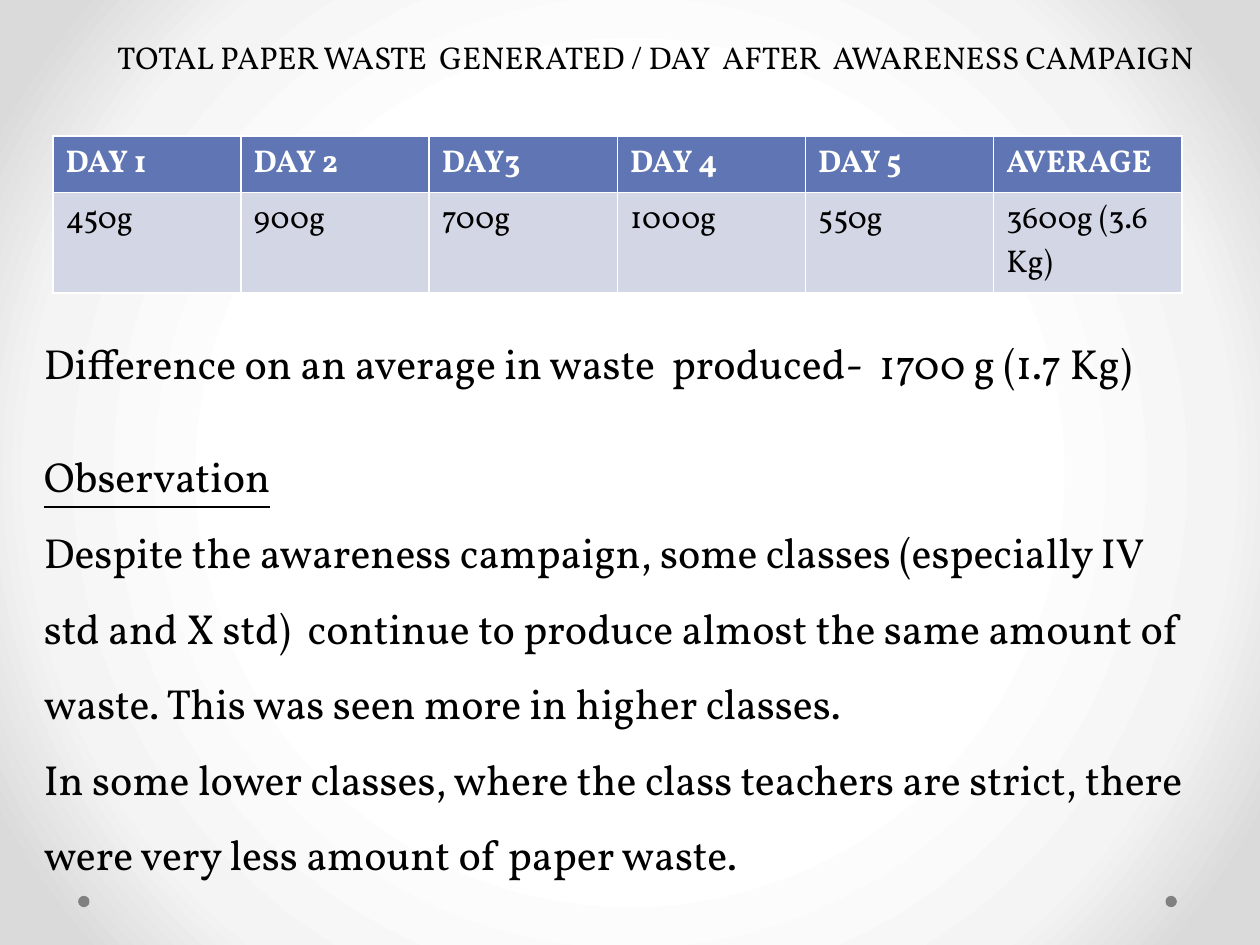
from dataclasses import dataclass

from lxml import etree
from pptx import Presentation
from pptx.dml.color import RGBColor
from pptx.enum import shapes, text
from pptx.oxml import ns
from pptx.util import Inches, Pt

FONT = "Vollkorn"
BLACK = RGBColor(0x00, 0x00, 0x00)
WHITE = RGBColor(0xFF, 0xFF, 0xFF)
GREY = RGBColor(0x80, 0x80, 0x80)
BLUE = RGBColor(0x60, 0x76, 0xB4)
PALE_BLUE = RGBColor(0xD2, 0xD6, 0xE5)
GLOW_STOPS = [(50, WHITE), (76, RGBColor(0xF4, 0xF4, 0xF4)), (92, RGBColor(0xDA, 0xDA, 0xDA))]


@dataclass
class Line:
    words: str
    underline: bool = False


@dataclass
class TextBlock:
    top: float
    height: float
    lines: list[Line]
    spacing: float = 1.0


@dataclass
class TableRow:
    values: list[str]
    fill: RGBColor
    color: RGBColor
    bold: bool


TABLE_ROWS = [
    TableRow(["DAY 1", "DAY 2", "DAY3", "DAY 4", "DAY 5", "AVERAGE"], BLUE, WHITE, True),
    TableRow(["450g", "900g", "700g", "1000g", "550g", "3600g (3.6 Kg)"], PALE_BLUE, BLACK, False),
]
TEXT_BLOCKS = [
    TextBlock(2.63, 0.5, [Line("Difference on an average in waste  produced-  1700 g (1.7 Kg)")]),
    TextBlock(3.33, 3.74, [
        Line("Observation", underline=True),
        Line("Despite the awareness campaign, some classes (especially IV std and X std)  continue "
             "to produce almost the same amount of waste. This was seen more in higher classes."),
        Line("In some lower classes, where the class teachers are strict, there were very less "
             "amount of paper waste."),
    ], spacing=1.5),
]


def write(para, words: str, *, size: float, color: RGBColor = BLACK, bold: bool = False,
          underline: bool = False, spacing: float = 1.0) -> None:
    para.alignment = text.PP_ALIGN.LEFT
    para.line_spacing = spacing
    span = para.add_run()
    span.text = words
    font = span.font
    font.name, font.size, font.bold, font.underline = FONT, Pt(size), bold, underline
    font.color.rgb = color


def place(shape, left: float, top: float, width: float, height: float) -> None:
    shape.left, shape.top = Inches(left), Inches(top)
    shape.width, shape.height = Inches(width), Inches(height)


def paint_background(page) -> None:
    fill = page.background.fill
    fill.gradient()
    gradient = page.background._cSld.find(".//" + ns.qn("a:gradFill"))
    for child in list(gradient):
        gradient.remove(child)
    stops = etree.SubElement(gradient, ns.qn("a:gsLst"))
    for position, color in GLOW_STOPS:
        stop = etree.SubElement(stops, ns.qn("a:gs"), pos=str(position * 1000))
        etree.SubElement(stop, ns.qn("a:srgbClr"), val=str(color))
    circle = etree.SubElement(gradient, ns.qn("a:path"), {"path": "circle"})
    etree.SubElement(circle, ns.qn("a:fillToRect"), {side: "50000" for side in "ltrb"})


def add_dot(page, left: float) -> None:
    dot = page.shapes.add_shape(shapes.MSO_SHAPE.OVAL, Inches(left), Inches(7.11),
                                Inches(0.09), Inches(0.09))
    dot.shadow.inherit = False
    dot.fill.solid()
    dot.fill.fore_color.rgb = GREY
    dot.line.fill.background()


def add_waste_table(page, rows: list[TableRow]) -> None:
    # The default table style supplies the white rules between cells
    table = page.shapes.add_table(len(rows), len(rows[0].values), Inches(0.42), Inches(1.08),
                                  Inches(8.96), Inches(0.82)).table
    for row_index, row in enumerate(rows):
        for column, value in enumerate(row.values):
            cell = table.cell(row_index, column)
            cell.fill.solid()
            cell.fill.fore_color.rgb = row.fill
            write(cell.text_frame.paragraphs[0], value, size=18, color=row.color, bold=row.bold)


def add_text_block(page, block: TextBlock) -> None:
    box = page.shapes.add_textbox(Inches(0.25), Inches(block.top), Inches(9.33), Inches(block.height))
    frame = box.text_frame
    frame.word_wrap = True
    for index, line in enumerate(block.lines):
        para = frame.add_paragraph() if index else frame.paragraphs[0]
        write(para, line.words, size=24, underline=line.underline, spacing=block.spacing)


def main() -> None:
    deck = Presentation()
    deck.slide_width, deck.slide_height = Inches(10), Inches(7.5)
    page = deck.slides.add_slide(deck.slide_layouts.get_by_name("Title Only"))
    paint_background(page)

    # Footer dots
    for left in (9.25, 0.62):
        add_dot(page, left)

    # Title
    title = page.shapes.title
    place(title, 0.83, 0.25, 8.75, 0.71)
    title.text_frame.vertical_anchor = text.MSO_ANCHOR.TOP
    title.text_frame.auto_size = text.MSO_AUTO_SIZE.NONE
    write(title.text_frame.paragraphs[0],
          "TOTAL PAPER WASTE  GENERATED / DAY  AFTER  AWARENESS CAMPAIGN", size=18)

    # Daily figures and findings
    add_waste_table(page, TABLE_ROWS)
    for block in TEXT_BLOCKS:
        add_text_block(page, block)

    deck.save("out.pptx")


if __name__ == "__main__":
    main()
